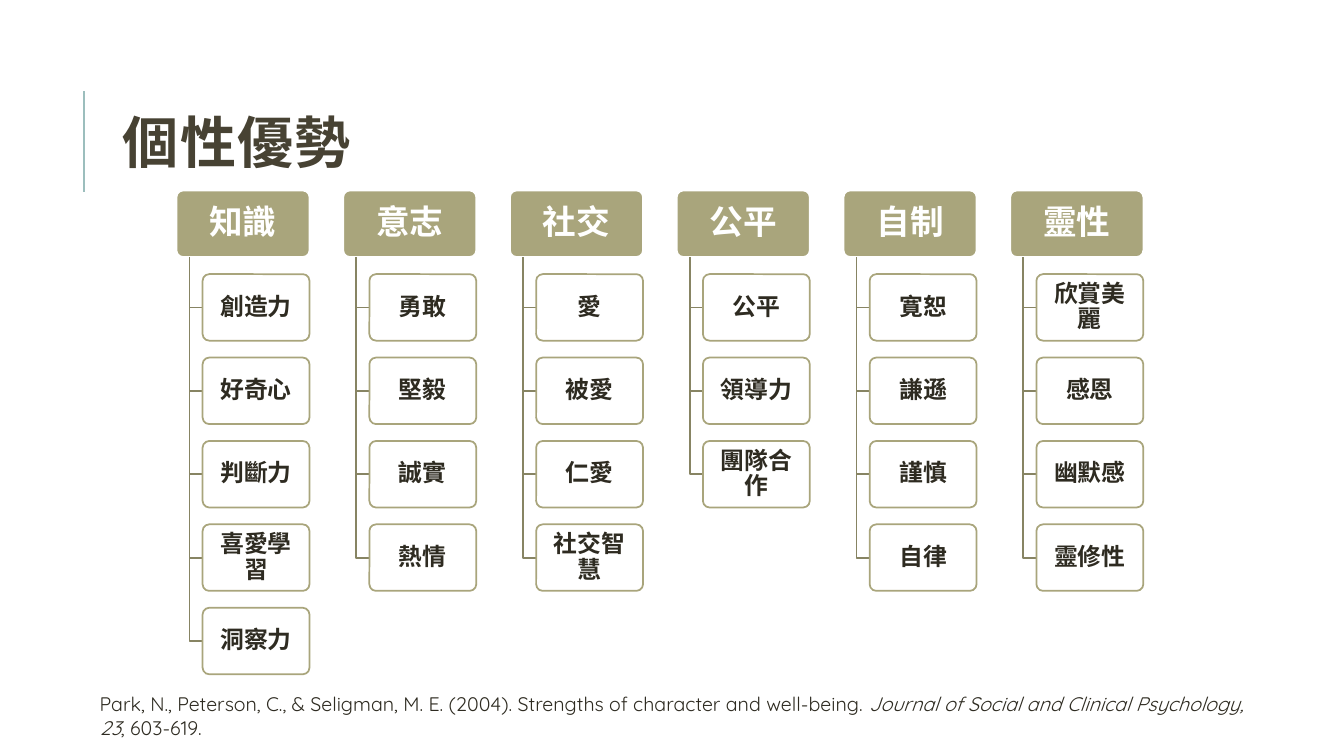
"""Build a slide of six character virtues and the strengths under each."""
from dataclasses import dataclass

from lxml import etree
from pptx import Presentation
from pptx import util as u
from pptx.dml.color import RGBColor
from pptx.enum import shapes, text
from pptx.oxml.ns import qn

WHITE = RGBColor(0xFF, 0xFF, 0xFF)
KHAKI = RGBColor(0xA9, 0xA5, 0x7C)
BRANCH = RGBColor(0x87, 0x84, 0x63)
TEAL = RGBColor(0x9C, 0xBE, 0xBD)
TITLE_BROWN = RGBColor(0x47, 0x42, 0x33)
INK = RGBColor(0x2E, 0x2B, 0x21)
CJK_FONT = "Noto Sans CJK SC"

COLUMN_LEFT, COLUMN_TOP = 1.75, 1.89
COLUMN_STEP = (10.02 - 1.75) / 5
BOX_HEIGHT = 0.66
HEADER_WIDTH, STRENGTH_WIDTH = 1.32, 1.06
TRUNK_INDENT, STRENGTH_INDENT = 0.13, 0.26
STRENGTH_TOP = 2.72
ROW_STEP = (6.03 - 2.72) / 4


@dataclass(frozen=True)
class Virtue:
    name: str
    strengths: tuple[str, ...]


@dataclass(frozen=True)
class BoxStyle:
    width: float
    fill: RGBColor
    opacity: int
    outline: RGBColor
    ink: RGBColor
    size: int


@dataclass(frozen=True)
class Wording:
    words: str
    size: int
    font: str
    color: RGBColor
    bold: bool = False
    italic: bool = False
    spacing: int = 0


HEADER = BoxStyle(HEADER_WIDTH, KHAKI, 100, WHITE, WHITE, 24)
STRENGTH = BoxStyle(STRENGTH_WIDTH, WHITE, 90, KHAKI, INK, 17)

VIRTUES = (
    Virtue("知識", ("創造力", "好奇心", "判斷力", "喜愛學習", "洞察力")),
    Virtue("意志", ("勇敢", "堅毅", "誠實", "熱情")),
    Virtue("社交", ("愛", "被愛", "仁愛", "社交智慧")),
    Virtue("公平", ("公平", "領導力", "團隊合作")),
    Virtue("自制", ("寛恕", "謙遜", "謹慎", "自律")),
    Virtue("靈性", ("欣賞美麗", "感恩", "幽默感", "靈修性")),
)

TITLE = Wording("個性優勢", 40, "Calibri", TITLE_BROWN, bold=True, spacing=100)
CITATION = (
    Wording("Park, N., Peterson, C., & Seligman, M. E. (2004). "
            "Strengths of character and well-being. ", 14, "Quicksand", INK),
    Wording("Journal of Social and Clinical Psychology, 23", 14, "Quicksand",
            INK, italic=True),
    Wording(", 603-619.", 14, "Quicksand", INK),
)


def add_wording(paragraph, wording: Wording) -> None:
    """Append one formatted run to a paragraph."""
    run = paragraph.add_run()
    run.text = wording.words
    run.font.size = u.Pt(wording.size)
    run.font.name = wording.font
    run.font.bold = wording.bold
    run.font.italic = wording.italic
    run.font.color.rgb = wording.color
    properties = run.font._element
    east_asian = etree.SubElement(properties, qn("a:ea"))
    east_asian.set("typeface", CJK_FONT)
    if wording.spacing:
        properties.set("spc", str(wording.spacing))


def add_text(slide, left: float, top: float, width: float, height: float,
             wordings: tuple[Wording, ...], line_spacing: float,
             anchor: text.MSO_ANCHOR) -> None:
    """Add a wrapped text box holding one paragraph."""
    frame = slide.shapes.add_textbox(
        u.Inches(left), u.Inches(top), u.Inches(width), u.Inches(height)).text_frame
    frame.word_wrap = True
    frame.vertical_anchor = anchor
    paragraph = frame.paragraphs[0]
    paragraph.line_spacing = line_spacing
    for wording in wordings:
        add_wording(paragraph, wording)


def add_box(slide, left: float, top: float, label: str, style: BoxStyle) -> None:
    """Add a rounded box with a centred label."""
    box = slide.shapes.add_shape(
        shapes.MSO_SHAPE.ROUNDED_RECTANGLE, u.Inches(left), u.Inches(top),
        u.Inches(style.width), u.Inches(BOX_HEIGHT))
    box.adjustments[0] = 0.1
    box.shadow.inherit = False
    box.fill.solid()
    box.fill.fore_color.rgb = style.fill
    if style.opacity < 100:
        color = box._element.spPr.find(qn("a:solidFill"))[0]
        etree.SubElement(color, qn("a:alpha")).set("val", str(style.opacity * 1000))
    box.line.color.rgb = style.outline
    box.line.width = u.Pt(1.25)
    frame = box.text_frame
    frame.word_wrap = True
    frame.vertical_anchor = text.MSO_ANCHOR.MIDDLE
    frame.margin_left = frame.margin_right = u.Inches(0.04)
    frame.margin_top = frame.margin_bottom = u.Inches(0.04)
    paragraph = frame.paragraphs[0]
    paragraph.alignment = text.PP_ALIGN.CENTER
    paragraph.line_spacing = 0.9
    add_wording(paragraph, Wording(label, style.size, CJK_FONT, style.ink, bold=True))


def add_branch(slide, left: float, top: float, right: float, bottom: float) -> None:
    """Add an elbow line that runs down and then right."""
    builder = slide.shapes.build_freeform(u.Inches(left), u.Inches(top))
    builder.add_line_segments(
        [(u.Inches(left), u.Inches(bottom)), (u.Inches(right), u.Inches(bottom))],
        close=False)
    branch = builder.convert_to_shape()
    branch.shadow.inherit = False
    branch.fill.background()
    branch.line.color.rgb = BRANCH
    branch.line.width = u.Pt(1.25)


def add_virtue(slide, left: float, virtue: Virtue) -> None:
    """Add one virtue header with its strengths hanging below."""
    add_box(slide, left, COLUMN_TOP, virtue.name, HEADER)
    for row, strength in enumerate(virtue.strengths):
        top = STRENGTH_TOP + row * ROW_STEP
        add_branch(slide, left + TRUNK_INDENT, COLUMN_TOP + BOX_HEIGHT,
                   left + STRENGTH_INDENT, top + BOX_HEIGHT / 2)
        add_box(slide, left + STRENGTH_INDENT, top, strength, STRENGTH)


def add_title_rule(slide) -> None:
    """Add the vertical line beside the title."""
    rule = slide.shapes.add_connector(
        shapes.MSO_CONNECTOR.STRAIGHT, u.Inches(0.83), u.Inches(1.9),
        u.Inches(0.83), u.Inches(0.9))
    rule.line.color.rgb = TEAL
    rule.line.width = u.Pt(1.5)
    etree.SubElement(rule._element.spPr, qn("a:effectLst"))


def main() -> None:
    """Assemble and save the slide."""
    deck = Presentation()
    deck.slide_width, deck.slide_height = u.Inches(13.33), u.Inches(7.5)
    slide = deck.slides.add_slide(deck.slide_layouts[6])
    add_title_rule(slide)
    add_text(slide, 1.12, 0.64, 10.63, 1.64, (TITLE,), 0.8, text.MSO_ANCHOR.MIDDLE)
    for column, virtue in enumerate(VIRTUES):
        add_virtue(slide, COLUMN_LEFT + column * COLUMN_STEP, virtue)
    add_text(slide, 0.89, 6.82, 11.7, 0.57, CITATION, 1.0, text.MSO_ANCHOR.TOP)
    deck.save("out.pptx")


if __name__ == "__main__":
    main()
